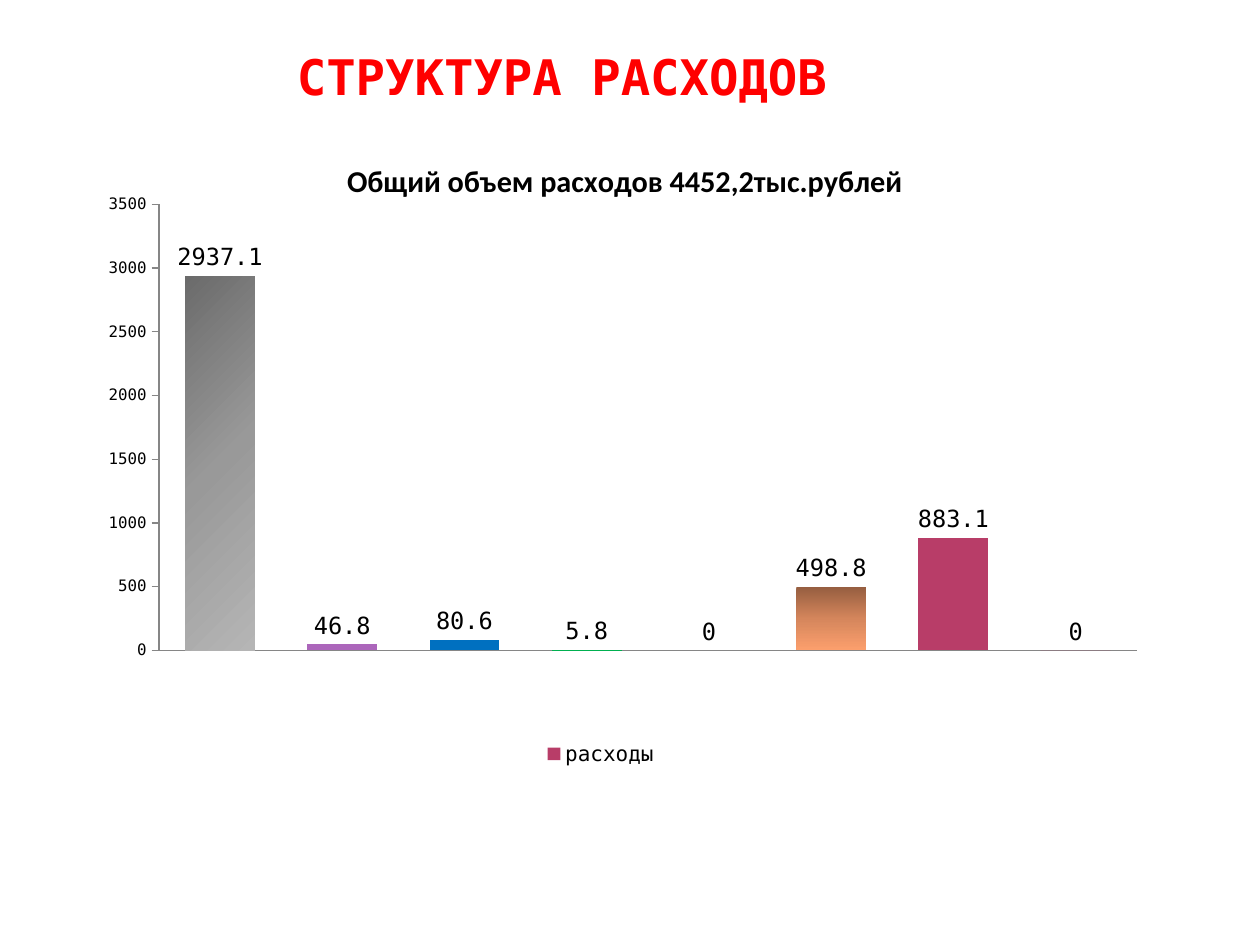
from copy import deepcopy

from lxml import etree
from pptx import Presentation
from pptx.chart.data import CategoryChartData
from pptx.dml.color import RGBColor
from pptx.enum.chart import (XL_CHART_TYPE, XL_LABEL_POSITION, XL_LEGEND_POSITION,
                             XL_TICK_LABEL_POSITION, XL_TICK_MARK)
from pptx.enum.text import MSO_ANCHOR, PP_ALIGN
from pptx.oxml.ns import qn
from pptx.util import Inches, Pt

COLUMN = XL_CHART_TYPE.COLUMN_CLUSTERED
OUTSIDE_END = XL_LABEL_POSITION.OUTSIDE_END
BOTTOM_LEGEND = XL_LEGEND_POSITION.BOTTOM
NO_TICK_LABELS = XL_TICK_LABEL_POSITION.NONE
TICK_NONE, TICK_OUT = XL_TICK_MARK.NONE, XL_TICK_MARK.OUTSIDE
BOTTOM, CENTER = MSO_ANCHOR.BOTTOM, PP_ALIGN.CENTER

MONO = "DejaVu Sans Mono"
COLORS = {"heading": "FF0000", "text": "000000", "axis": "868686", "series": "B83D68"}
HEADING = "СТРУКТУРА РАСХОДОВ"
CHART_TITLE = "Общий объем расходов 4452,2тыс.рублей"
SERIES = "расходы"
EXPENSES = [2937.1, 46.8, 80.6, 5.8, 0, 498.8, 883.1, 0]
SOLID_POINTS = {1: "AC66BB", 2: "0070C0", 3: "00B050"}
GRADIENT_POINTS = {
    0: (("6B6B6B", "999999", "B5B5B5"), 45),
    4: (("979700", "D7D700", "FFFF00"), 90),
    5: (("965E40", "D5865C", "FC9F6D"), 90),
}
LAYOUTS = {
    "plot": {"layoutTarget": "inner", "xMode": "edge", "yMode": "edge",
             "x": 0.105, "y": 0.107, "w": 0.83, "h": 0.599},
    "title": {"xMode": "edge", "yMode": "edge", "x": 0.26, "y": 0.04},
    "legend": {"xMode": "edge", "yMode": "edge", "x": 0.43, "y": 0.82, "w": 0.1, "h": 0.05},
}


def rgb(name):
    return RGBColor.from_string(COLORS.get(name, name))


def style(font, size, color="text", name=MONO, bold=False):
    font.size = Pt(size)
    font.name = name
    font.bold = bold
    font.color.rgb = rgb(color)


def write(frame, text, **font_format):
    paragraph = frame.paragraphs[0]
    paragraph.alignment = CENTER
    run = paragraph.add_run()
    run.text = text
    style(run.font, **font_format)


def place(part, settings, before):
    for old in part.findall(qn("c:layout")):
        part.remove(old)
    layout = etree.Element(qn("c:layout"))
    manual = etree.SubElement(layout, qn("c:manualLayout"))
    for tag, value in settings.items():
        etree.SubElement(manual, qn(f"c:{tag}")).set("val", str(value))
    following = next(child for child in part if child.tag in [qn(tag) for tag in before])
    following.addprevious(layout)


def paint_gradient(point, series_xml, hues, angle):
    fill = point.format.fill
    fill.gradient()
    fill.gradient_angle = 360 - angle
    stop_list = series_xml.xpath(".//a:gsLst")[-1]
    stop_list.insert(1, deepcopy(stop_list[0]))
    for index, (stop, hue) in enumerate(zip(fill.gradient_stops, hues)):
        stop.color.rgb = rgb(hue)
        stop.position = index / (len(hues) - 1)


def add_heading(slide):
    heading = slide.shapes.title
    heading.left, heading.top = Inches(0.5), Inches(0.35)
    heading.width, heading.height = Inches(7.92), Inches(0.49)
    frame = heading.text_frame
    frame.vertical_anchor = BOTTOM
    frame.margin_left = frame.margin_right = Inches(0.05)
    frame.margin_top = frame.margin_bottom = 0
    write(frame, HEADING, size=28, color="heading", bold=True)


def add_expense_chart(slide):
    data = CategoryChartData()
    data.categories = [str(number) for number in range(1, len(EXPENSES) + 1)]
    data.add_series(SERIES, EXPENSES)
    chart = slide.shapes.add_chart(COLUMN, Inches(0.28), Inches(0.99),
                                   Inches(9.35), Inches(5.91), data).chart
    style(chart.font, 17.3)
    chart.has_title = True
    write(chart.chart_title.text_frame, CHART_TITLE, size=17.3, name="Calibri", bold=True)
    chart.chart_title.include_in_layout = False

    chart.has_legend = True
    chart.legend.position = BOTTOM_LEGEND
    chart.legend.include_in_layout = False
    style(chart.legend.font, 12)

    for axis, size, tick in ((chart.category_axis, 13.5, TICK_NONE),
                             (chart.value_axis, 9, TICK_OUT)):
        style(axis.tick_labels.font, size)
        axis.major_tick_mark = tick
        axis.minor_tick_mark = TICK_NONE
        axis.has_major_gridlines = False
        axis.format.line.color.rgb = rgb("axis")
    chart.category_axis.tick_label_position = NO_TICK_LABELS
    chart.value_axis.minimum_scale = 0
    chart.value_axis.maximum_scale = 3500
    chart.value_axis.major_unit = 500

    plot = chart.plots[0]
    plot.gap_width = 75
    plot.vary_by_categories = False
    series = plot.series[0]
    series.format.fill.solid()
    series.format.fill.fore_color.rgb = rgb("series")
    series.invert_if_negative = False
    for index, hue in SOLID_POINTS.items():
        fill = series.points[index].format.fill
        fill.solid()
        fill.fore_color.rgb = rgb(hue)
    for index, (hues, angle) in sorted(GRADIENT_POINTS.items(), reverse=True):
        point = series.points[index]
        point_xml = point.format and series._element.xpath(f"c:dPt[c:idx/@val='{index}']")[0]
        paint_gradient(point, point_xml, hues, angle)

    labels = series.data_labels
    labels.show_value = True
    labels.position = OUTSIDE_END
    style(labels.font, 13.5)

    chart_xml = chart._chartSpace.chart
    place(chart_xml.plotArea, LAYOUTS["plot"], ["c:barChart"])
    place(chart.chart_title._element, LAYOUTS["title"], ["c:overlay"])
    place(chart.legend._element, LAYOUTS["legend"], ["c:overlay"])


def main():
    deck = Presentation()
    deck.slide_width, deck.slide_height = Inches(10), Inches(7.5)
    slide = deck.slides.add_slide(deck.slide_layouts[5])
    add_heading(slide)
    add_expense_chart(slide)
    deck.save("out.pptx")


if __name__ == "__main__":
    main()
